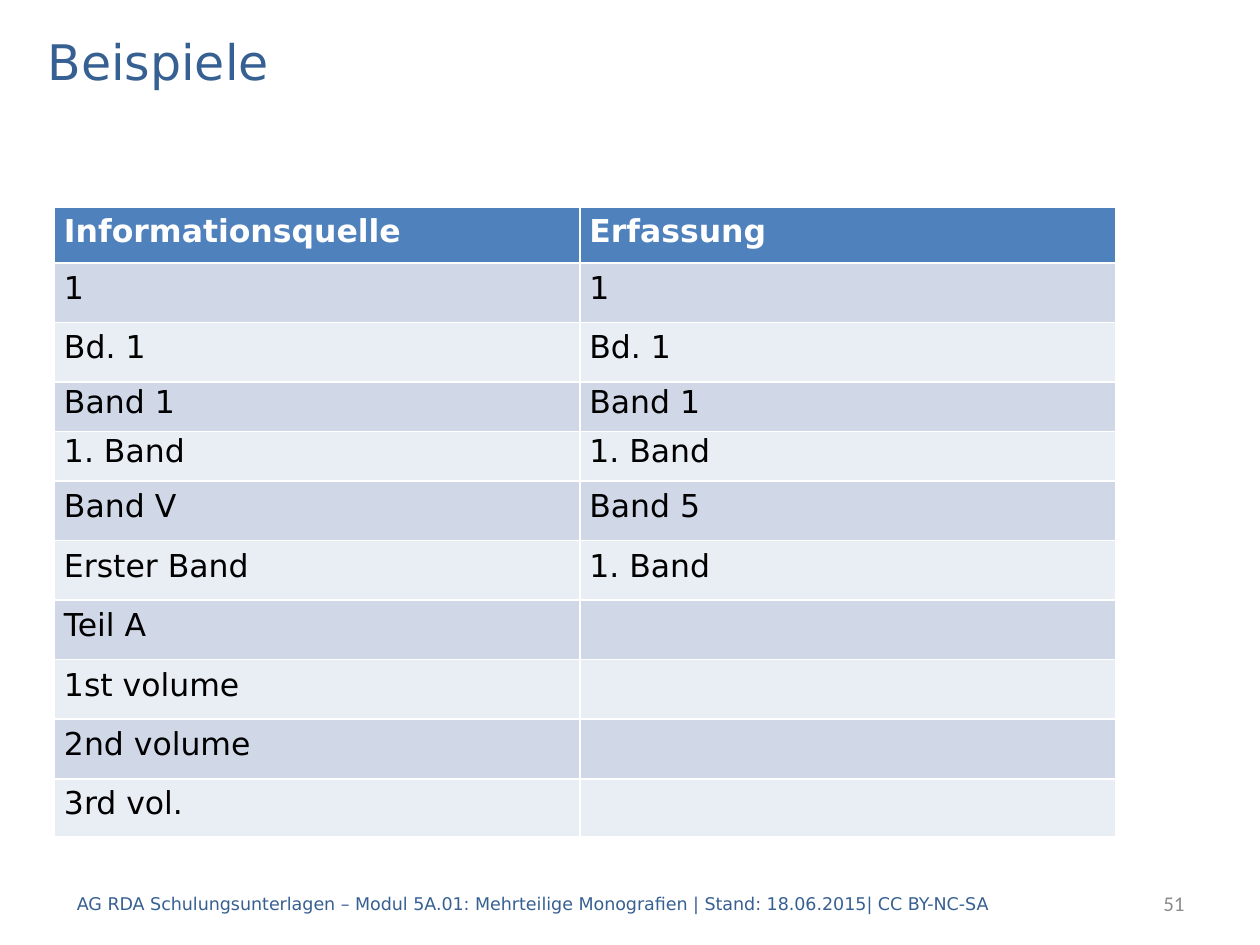
from pptx import Presentation
from pptx.dml.color import RGBColor
from pptx.enum.text import MSO_ANCHOR as Anchor, PP_ALIGN as Align
from pptx.util import Cm, Pt

NAVY = RGBColor(0x37, 0x60, 0x92)
GREY = RGBColor(0x8C, 0x8C, 0x8C)
WHITE = RGBColor(0xFF, 0xFF, 0xFF)
BLACK = RGBColor(0x00, 0x00, 0x00)
HEADER_BLUE = RGBColor(0x4F, 0x81, 0xBD)
BANDS = (RGBColor(0xD0, 0xD8, 0xE8), RGBColor(0xE9, 0xED, 0xF4))
FONT = "DejaVu Sans"

COLUMN_WIDTHS = (10.59, 10.8)
HEADER_HEIGHT = 1.13
HEADER = ("Informationsquelle", "Erfassung")
# Row height in cm, wording on the source, wording as recorded
EXAMPLES = (
    (1.2, "1", "1"),
    (1.2, "Bd. 1", "Bd. 1"),
    (1.0, "Band 1", "Band 1"),
    (1.0, "1. Band", "1. Band"),
    (1.2, "Band V", "Band 5"),
    (1.2, "Erster Band", "1. Band"),
    (1.2, "Teil A", ""),
    (1.2, "1st volume", ""),
    (1.2, "2nd volume", ""),
    (1.17, "3rd vol.", ""),
)


def format_runs(paragraph, size, color, font=FONT, bold=False):
    for run in paragraph.runs:
        run.font.name = font
        run.font.size = Pt(size)
        run.font.bold = bold
        run.font.color.rgb = color


def add_label(slide, box, text, size, color, font=FONT, align=Align.LEFT):
    shape = slide.shapes.add_textbox(*(Cm(length) for length in box))
    frame = shape.text_frame
    frame.word_wrap = True
    frame.vertical_anchor = Anchor.MIDDLE
    frame.text = text
    paragraph = frame.paragraphs[0]
    paragraph.alignment = align
    format_runs(paragraph, size, color, font)


def fill_cell(cell, text, fill):
    cell.fill.solid()
    cell.fill.fore_color.rgb = fill
    cell.margin_left = cell.margin_right = Cm(0.19)
    cell.text_frame.text = text
    return cell.text_frame.paragraphs[0]


def fill_example_cell(cell, text, fill):
    paragraph = fill_cell(cell, text, fill)
    cell.margin_top = cell.margin_bottom = 0
    cell.vertical_anchor = Anchor.MIDDLE
    paragraph.line_spacing = Pt(16)
    paragraph.space_before = paragraph.space_after = Pt(6)
    format_runs(paragraph, 18, BLACK)


def add_examples_table(slide, left, top):
    heights = [HEADER_HEIGHT] + [height for height, *_ in EXAMPLES]
    table = slide.shapes.add_table(
        len(heights), len(HEADER), Cm(left), Cm(top),
        Cm(sum(COLUMN_WIDTHS)), Cm(sum(heights))).table
    for column, width in zip(table.columns, COLUMN_WIDTHS):
        column.width = Cm(width)
    for row, height in zip(table.rows, heights):
        row.height = Cm(height)

    for column, text in enumerate(HEADER):
        paragraph = fill_cell(table.cell(0, column), text, HEADER_BLUE)
        format_runs(paragraph, 18, WHITE, bold=True)
    for index, (_, *texts) in enumerate(EXAMPLES):
        for column, text in enumerate(texts):
            fill_example_cell(table.cell(index + 1, column), text,
                              BANDS[index % 2])


def add_footer(slide, top, height):
    add_label(slide, (1.3, top, 20.8, height),
              "AG RDA Schulungsunterlagen – Modul 5A.01: Mehrteilige "
              "Monografien | Stand: 18.06.2015| CC BY-NC-SA", 10, NAVY)
    add_label(slide, (20.09, top, 4.04, height), "51", 12, GREY,
              "Calibri", Align.RIGHT)


def main():
    presentation = Presentation()
    presentation.slide_width = Cm(25.4)
    presentation.slide_height = Cm(19.05)
    slide = presentation.slides.add_slide(presentation.slide_layouts[6])
    add_footer(slide, 17.7, 1.02)
    add_examples_table(slide, 1.1, 4.17)
    add_label(slide, (0.71, 0.51, 24, 1.42), "Beispiele", 28, NAVY)
    presentation.save("out.pptx")


if __name__ == "__main__":
    main()
